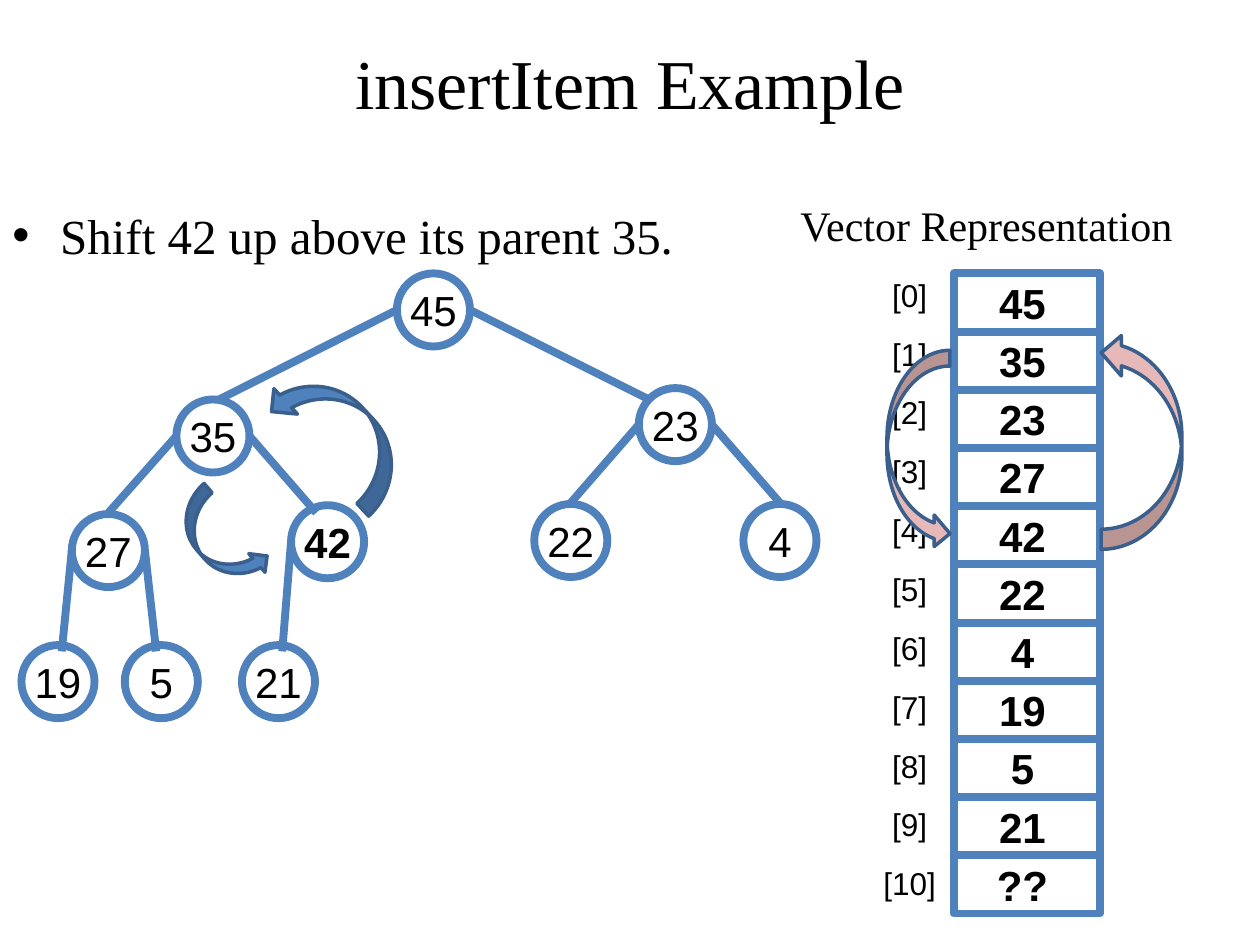
from lxml import etree
from pptx import Presentation
from pptx import util as u
from pptx.dml.color import RGBColor
from pptx.enum import shapes, text
from pptx.oxml.ns import qn

Inches = u.Inches
COLORS = {"ink": "000000", "blue": "4F81BD", "edge": "3A5F8C", "pink": "E6B9B8"}
SERIF, SANS = "Times New Roman", "Arial"
NODE = 0.58

# Heap nodes: label, left, top, parent, side of the parent, end of the edge
NODES = [
    ("45", 3.15, 2.17, None, None, None),
    ("35", 1.40, 3.17, "45", "left", (1.74, 3.17)),
    ("23", 5.07, 3.08, "45", "right", (5.15, 3.17)),
    ("27", 0.57, 4.08, "35", "left", (0.86, 4.07)),
    ("42", 2.31, 4.01, "35", "right", (2.51, 4.07)),
    ("22", 4.24, 4.00, "23", "left", (4.53, 3.99)),
    ("4", 5.90, 4.00, "23", "right", (6.19, 3.99)),
    ("19", 0.17, 5.12, "27", "left", (0.49, 5.17)),
    ("5", 0.99, 5.12, "27", "right", (1.24, 5.17)),
    ("21", 1.92, 5.12, "42", "left", (2.24, 5.17)),
]
VECTOR = ["45", "35", "23", "27", "42", "22", "4", "19", "5", "21", "??"]


def rgb(name):
    return RGBColor.from_string(COLORS[name])


def box(left, top, width, height):
    return [Inches(v) for v in (left, top, width, height)]


def write(tf, words, size, font, bold=False, align=text.PP_ALIGN.CENTER):
    p = tf.paragraphs[0]
    p.alignment = align
    r = p.add_run()
    r.text = words
    r.font.size, r.font.name, r.font.bold = u.Pt(size), font, bold
    r.font.color.rgb = rgb("ink")
    return p


def add_text(s, at, words, size, font, wrap=True, anchor=text.MSO_ANCHOR.TOP,
             align=text.PP_ALIGN.CENTER):
    tf = s.shapes.add_textbox(*box(*at)).text_frame
    tf.word_wrap, tf.vertical_anchor = wrap, anchor
    return write(tf, words, size, font, align=align)


def add_shape(s, kind, at, line, width, fill=None):
    sp = s.shapes.add_shape(kind, *box(*at))
    sp.shadow.inherit = False
    if fill:
        sp.fill.solid()
        sp.fill.fore_color.rgb = rgb(fill)
    else:
        sp.fill.background()
    sp.line.color.rgb, sp.line.width = rgb(line), u.Pt(width)
    return sp


def add_labelled(s, kind, at, words, bold, right=0):
    sp = add_shape(s, kind, at, "blue", 4.5)
    tf = sp.text_frame
    tf.word_wrap, tf.vertical_anchor = False, text.MSO_ANCHOR.MIDDLE
    tf.margin_left = tf.margin_top = tf.margin_bottom = 0
    tf.margin_right = Inches(right)
    write(tf, words, 24, SANS, bold)


def add_edge(s, start, end):
    line = s.shapes.add_connector(shapes.MSO_CONNECTOR.STRAIGHT,
                                  *[Inches(v) for v in (*start, *end)])
    line.line.color.rgb, line.line.width = rgb("blue"), u.Pt(4.5)
    etree.SubElement(line._element.spPr, qn("a:effectLst"))


def add_curved_arrow(s, kind, at, fill, rotation=0, flip=None):
    sp = add_shape(s, kind, at, "edge", 2, fill)
    sp.rotation = rotation
    if flip:
        sp._element.spPr.find(qn("a:xfrm")).set(flip, "1")


def add_heading(s, left, top, width, height):
    title = s.shapes.title
    title.left, title.top, title.width, title.height = box(left, top, width, height)
    title.text_frame.vertical_anchor = text.MSO_ANCHOR.MIDDLE
    write(title.text_frame, "insertItem Example", 40, SERIF)


def add_step(s, left, top, width, height):
    p = add_text(s, (left, top, width, height), "Shift 42 up above its parent 35.",
                 28, SERIF, align=text.PP_ALIGN.LEFT)
    p.space_before = u.Pt(5.6)
    pPr = p._p.get_or_add_pPr()
    pPr.set("marL", str(Inches(0.38)))
    pPr.set("indent", str(Inches(-0.38)))
    etree.SubElement(pPr, qn("a:buFont")).set("typeface", SANS)
    etree.SubElement(pPr, qn("a:buChar")).set("char", "•")


def add_vector(s, left, top, width, height):
    add_text(s, (6.08, top - 0.64, 3.5, 0.5), "Vector Representation", 24, SERIF,
             anchor=text.MSO_ANCHOR.MIDDLE)
    row = height / len(VECTOR)
    for i, value in enumerate(VECTOR):
        add_labelled(s, shapes.MSO_SHAPE.RECTANGLE,
                     (left, top + i * row, width, row), value, True, right=0.07)
        label_w = 0.48 if i < 10 else 0.62
        add_text(s, (left - 0.35 - label_w / 2, top - 0.03 + i * 0.467, label_w, 0.4),
                 f"[{i}]", 18, SANS, wrap=False)


def add_tree(s):
    corners = {}
    for label, x, y, parent, side, end in NODES:
        corners[label] = x, y
        add_labelled(s, shapes.MSO_SHAPE.OVAL, (x, y, NODE, NODE), label, label == "42")
        if parent:
            px, py = corners[parent]
            add_edge(s, (px + (NODE if side == "right" else 0), py + NODE / 2), end)


def add_swaps(s):
    left_arrow = shapes.MSO_SHAPE.CURVED_LEFT_ARROW
    right_arrow = shapes.MSO_SHAPE.CURVED_RIGHT_ARROW
    # Swap in the tree
    add_curved_arrow(s, right_arrow, (1.56, 3.86, 0.39, 0.86), "blue", 319)
    add_curved_arrow(s, left_arrow, (2.42, 2.81, 0.55, 1.27), "blue", 317.1, "flipV")
    # Swap in the vector
    add_curved_arrow(s, left_arrow, (8.74, 2.64, 0.64, 1.72), "pink", flip="flipV")
    add_curved_arrow(s, left_arrow, (7.04, 2.78, 0.5, 1.58), "pink", flip="flipH")


def main():
    prs = Presentation()
    prs.slide_width, prs.slide_height = Inches(10), Inches(7.5)
    s = prs.slides.add_slide(prs.slide_layouts[5])
    add_heading(s, 0.5, 0.3, 9, 0.7)
    add_step(s, 0, 1.58, 9.83, 5.42)
    add_vector(s, 7.57, 2.17, 1.16, 5.08)
    add_tree(s)
    add_swaps(s)
    prs.save("out.pptx")


if __name__ == "__main__":
    main()
